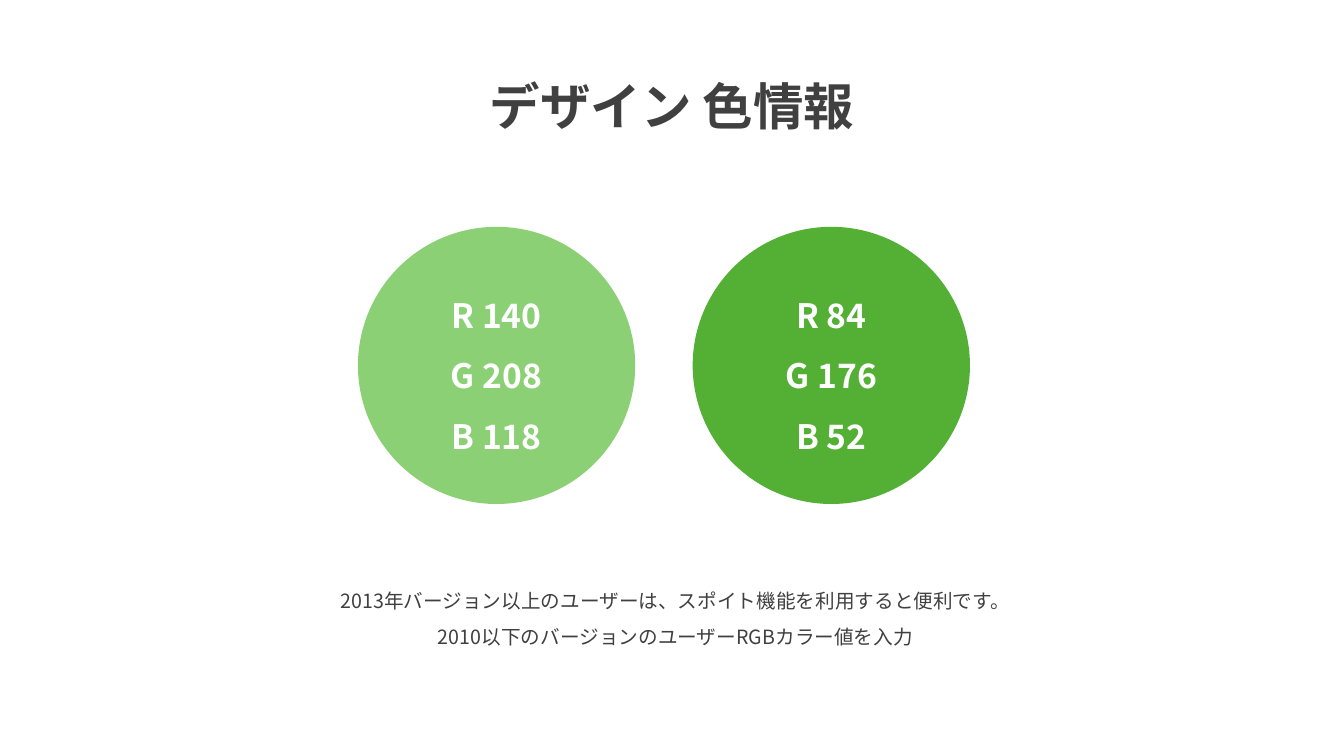
from lxml import etree
from pptx import Presentation
from pptx.dml.color import RGBColor
from pptx.enum.shapes import MSO_SHAPE
from pptx.enum.text import MSO_ANCHOR, MSO_AUTO_SIZE, PP_ALIGN
from pptx.oxml.ns import qn
from pptx.util import Inches, Pt

OVAL = MSO_SHAPE.OVAL
CENTER = PP_ALIGN.CENTER
TOP, MIDDLE = MSO_ANCHOR.TOP, MSO_ANCHOR.MIDDLE
GROW = MSO_AUTO_SIZE.SHAPE_TO_FIT_TEXT

FONT = "Noto Sans CJK KR"
COLORS = {"text": "404040", "white": "FFFFFF", "light": "8CD076", "dark": "54B034"}

TITLE = ["デザイン 色情報"]
SWATCHES = [
    ("light", ["R 140", "G 208", "B 118"]),
    ("dark", ["R 84", "G 176", "B 52"]),
]
NOTES = [
    "2013年バージョン以上のユーザーは、スポイト機能を利用すると便利です。",
    "2010以下のバージョンのユーザーRGBカラー値を入力",
]

WIDTH, HEIGHT = 13.33, 7.5
DIAMETER, PITCH = 2.75, 3.32
SWATCH_LEFT, SWATCH_TOP = 3.55, HEIGHT * 0.3
TITLE_BOX = (4.24, 0.4, 4.85, 0.91)
NOTES_BOX = (2.52, 5.68, 8.36, 0.77)


def write(sp, lines, size, color="text", bold=False, anchor=TOP):
    tf = sp.text_frame
    tf.word_wrap = True
    tf.vertical_anchor = anchor
    for i, line in enumerate(lines):
        p = tf.paragraphs[0] if i == 0 else tf.add_paragraph()
        p.alignment = CENTER
        p.line_spacing = 1.5
        r = p.add_run()
        r.text = line
        r.font.size = Pt(size)
        r.font.bold = bold
        r.font.color.rgb = RGBColor.from_string(COLORS[color])
        r.font.name = FONT
        etree.SubElement(r.font._element, qn("a:ea"), typeface=FONT)


def add_text(s, box, lines, size, **fmt):
    sp = s.shapes.add_textbox(*map(Inches, box))
    write(sp, lines, size, **fmt)
    sp.text_frame.auto_size = GROW


def add_swatch(s, column, color, lines):
    box = (SWATCH_LEFT + column * PITCH, SWATCH_TOP, DIAMETER, DIAMETER)
    sp = s.shapes.add_shape(OVAL, *map(Inches, box))
    sp.shadow.inherit = False
    sp.fill.solid()
    sp.fill.fore_color.rgb = RGBColor.from_string(COLORS[color])
    sp.line.fill.background()
    write(sp, lines, 24, color="white", bold=True, anchor=MIDDLE)


def main():
    prs = Presentation()
    prs.slide_width, prs.slide_height = Inches(WIDTH), Inches(HEIGHT)
    s = prs.slides.add_slide(prs.slide_layouts[6])
    for column, (color, lines) in enumerate(SWATCHES):
        add_swatch(s, column, color, lines)
    add_text(s, TITLE_BOX, TITLE, 36, bold=True)
    add_text(s, NOTES_BOX, NOTES, 14)
    prs.save("out.pptx")


if __name__ == "__main__":
    main()
